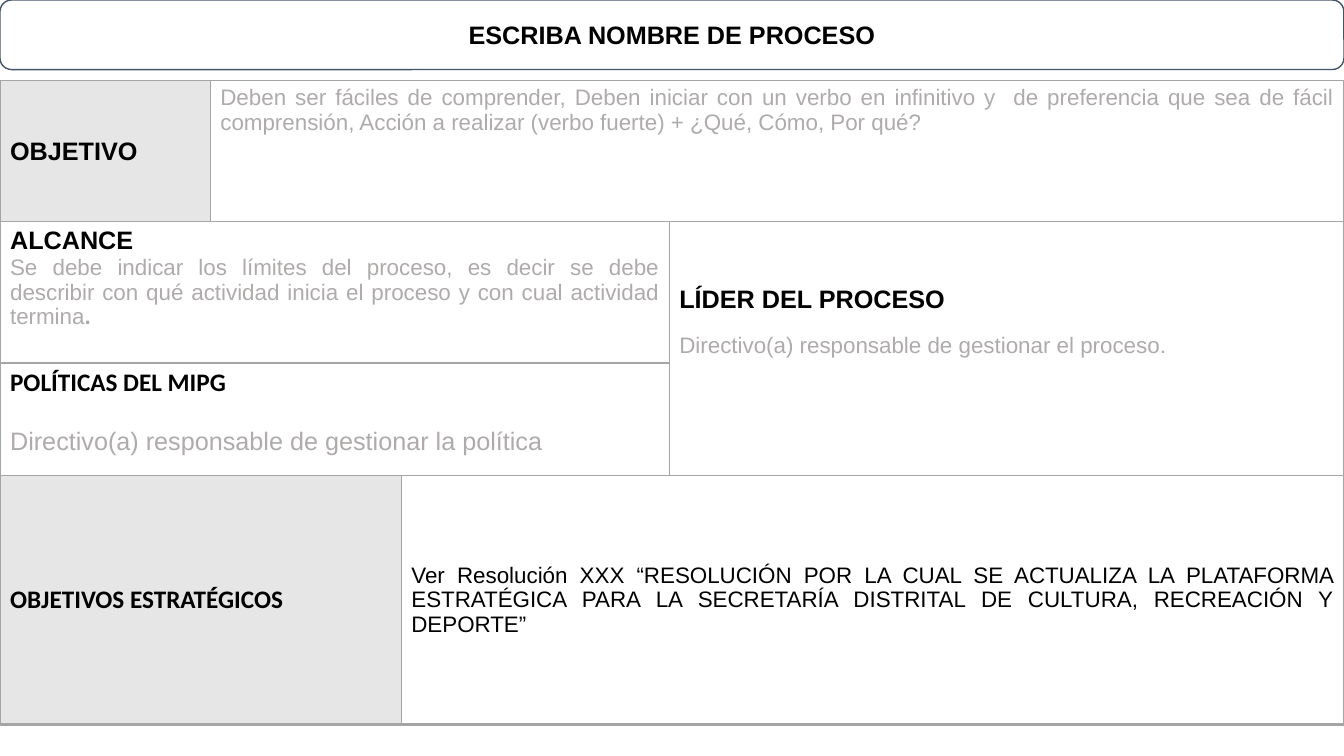
from lxml.etree import SubElement
from pptx import Presentation
from pptx.dml.color import RGBColor
from pptx.enum.shapes import MSO_SHAPE
from pptx.enum.text import MSO_ANCHOR, PP_ALIGN
from pptx.oxml.ns import qn
from pptx.util import Inches, Pt

COLORS = {"ink": "000000", "hint": "AFABAB", "label": "E7E6E6",
          "paper": "FFFFFF", "border": "A5A5A5", "outline": "44546A"}
BORDERS = {"a:lnL": 1, "a:lnR": 1, "a:lnT": 1, "a:lnB": 2}
CENTER, JUSTIFY = PP_ALIGN.CENTER, PP_ALIGN.JUSTIFY


def color(name):
    return RGBColor.from_string(COLORS[name])


def heading(text, font="Arial", align=None):
    return {"runs": [(text, True)], "size": 18, "font": font, "align": align}


def body(*runs, size=16, ink="hint", align=JUSTIFY, before=0):
    return {"runs": runs, "size": size, "ink": ink, "align": align, "before": before}


class ProcessSheet:
    """Style and current slide; lengths are percentages of the slide's size."""

    def __init__(self, deck):
        self.width, self.height = deck.slide_width, deck.slide_height
        self.slide = deck.slides.add_slide(deck.slide_layouts[6])

    def x(self, share):
        return round(self.width * share / 100)

    def y(self, share):
        return round(self.height * share / 100)

    def add_text(self, frame, paragraphs):
        for index, content in enumerate(paragraphs):
            paragraph = frame.add_paragraph() if index else frame.paragraphs[0]
            paragraph.alignment = content["align"]
            if content.get("before"):
                paragraph.space_before = Pt(content["before"])
            for text, bold in content["runs"]:
                run = paragraph.add_run()
                run.text = text
                run.font.name = content.get("font", "Arial")
                run.font.size = Pt(content["size"])
                run.font.bold = bold
                run.font.color.rgb = color(content.get("ink", "ink"))

    def banner(self, height, paragraph):
        banner = self.slide.shapes.add_shape(
            MSO_SHAPE.ROUNDED_RECTANGLE, 0, 0, self.width, self.y(height))
        banner.shadow.inherit = False
        banner.fill.solid()
        banner.fill.fore_color.rgb = color("paper")
        banner.line.color.rgb = color("outline")
        banner.line.width = Pt(1)
        banner.text_frame.vertical_anchor = MSO_ANCHOR.MIDDLE
        self.add_text(banner.text_frame, [paragraph])

    def table(self, top, columns, rows):
        table = self.slide.shapes.add_table(
            len(rows), len(columns), 0, self.y(top), self.width, self.y(sum(rows))).table
        table.first_row = table.horz_banding = False
        for column, share in zip(table.columns, columns):
            column.width = self.x(share)
        for row, share in zip(table.rows, rows):
            row.height = self.y(share)
        for cell in table.iter_cells():
            self.frame_cell(cell)
        return table

    def frame_cell(self, cell):
        properties = cell._tc.get_or_add_tcPr()
        for side, points in BORDERS.items():
            line = SubElement(properties, qn(side), w=str(Pt(points)))
            fill = SubElement(line, qn("a:solidFill"))
            SubElement(fill, qn("a:srgbClr"), val=COLORS["border"])
        cell.fill.solid()
        cell.fill.fore_color.rgb = color("paper")

    def fill_cell(self, cell, *paragraphs, fill="paper", middle=False):
        cell.fill.fore_color.rgb = color(fill)
        cell.vertical_anchor = MSO_ANCHOR.MIDDLE if middle else MSO_ANCHOR.TOP
        self.add_text(cell.text_frame, paragraphs)


def main():
    deck = Presentation()
    deck.slide_width, deck.slide_height = Inches(13.33), Inches(7.5)
    sheet = ProcessSheet(deck)

    # Process name
    sheet.banner(9.2, heading("ESCRIBA NOMBRE DE PROCESO", align=CENTER))

    # Objective
    objective = sheet.table(10.67, [15.65, 84.35], [18.67])
    sheet.fill_cell(objective.cell(0, 0), heading("OBJETIVO"), fill="label", middle=True)
    sheet.fill_cell(objective.cell(0, 1), body((
        "Deben ser fáciles de comprender, Deben iniciar con un verbo en infinitivo y  de "
        "preferencia que sea de fácil comprensión, Acción a realizar (verbo fuerte) + "
        "¿Qué, Cómo, Por qué?", False)))

    # Scope, policies and process leader
    scope = sheet.table(29.33, [49.8, 50.2], [18.67, 14.93])
    sheet.fill_cell(
        scope.cell(0, 0), heading("ALCANCE", align=JUSTIFY),
        body(("Se debe indicar los límites del proceso, es decir se debe describir con qué "
              "actividad inicia el proceso y con cual actividad termina", False), (".", True)))
    sheet.fill_cell(
        scope.cell(1, 0), heading("POLÍTICAS DEL MIPG", font="Calibri"),
        body(("Directivo(a) responsable de gestionar la política", False),
             size=18, align=None, before=21))
    leader = scope.cell(0, 1)
    leader.merge(scope.cell(1, 1))
    leader.margin_top = sheet.y(8.4)
    sheet.fill_cell(
        leader, heading("LÍDER DEL PROCESO"),
        body(("Directivo(a) responsable de gestionar el proceso.", False),
             align=None, before=14))

    # Strategic objectives
    strategy = sheet.table(62.93, [29.86, 70.14], [32.93])
    sheet.fill_cell(strategy.cell(0, 0), heading("OBJETIVOS ESTRATÉGICOS", font="Calibri"),
                    fill="label", middle=True)
    sheet.fill_cell(strategy.cell(0, 1), body((
        "Ver Resolución XXX “RESOLUCIÓN POR LA CUAL SE ACTUALIZA LA PLATAFORMA ESTRATÉGICA "
        "PARA LA SECRETARÍA DISTRITAL DE CULTURA, RECREACIÓN Y DEPORTE”", False),
        ink="ink"), middle=True)

    deck.save("out.pptx")


if __name__ == "__main__":
    main()
